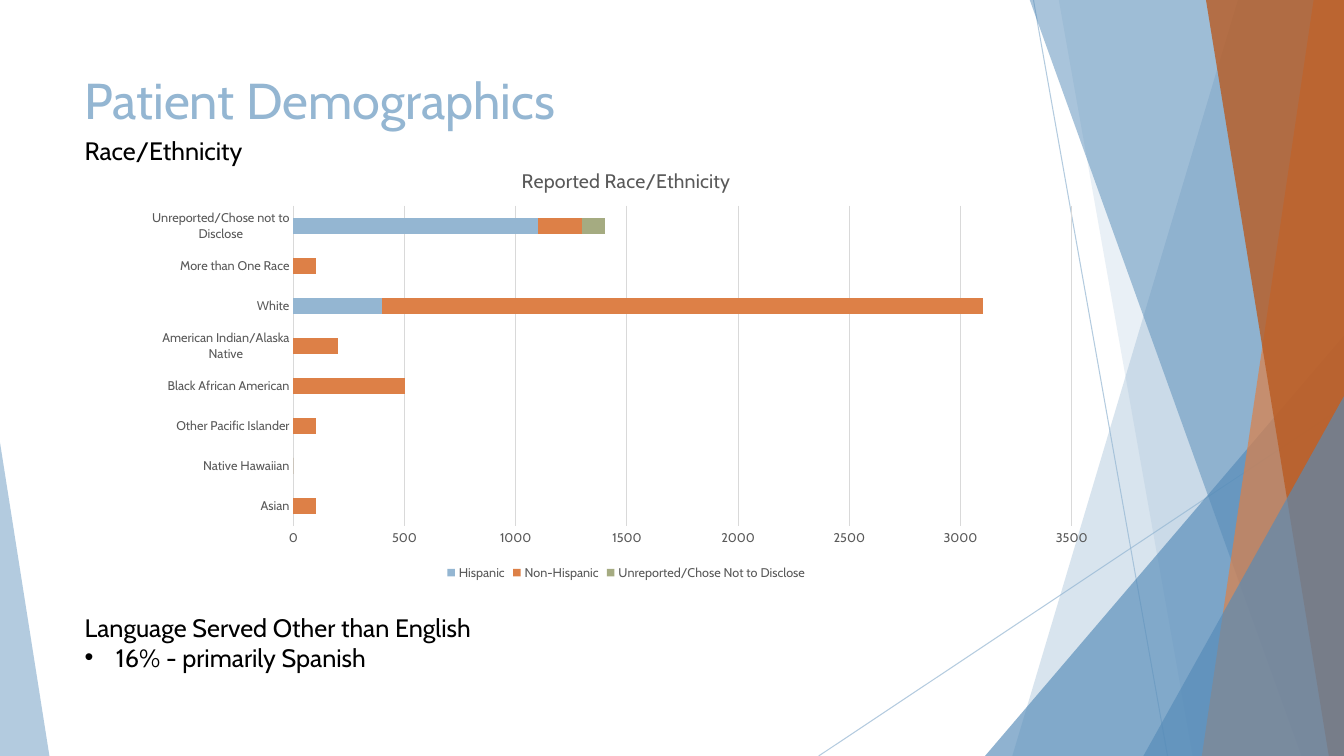
"""Build the Patient Demographics slide."""
from lxml.etree import SubElement as Sub
from pptx import Presentation
from pptx.chart.data import CategoryChartData as Data
from pptx.dml.color import RGBColor
from pptx.enum.chart import XL_CHART_TYPE as Kind, XL_LEGEND_POSITION as Spot, XL_TICK_MARK as Tick
from pptx.enum.shapes import MSO_CONNECTOR as Link, MSO_SHAPE as Shape
from pptx.enum.text import MSO_ANCHOR as Anchor, PP_ALIGN as Align
from pptx.oxml import parse_xml
from pptx.oxml.ns import nsdecls, qn
from pptx.util import Inches, Pt


def hue(code):
    return RGBColor.from_string(code)


def style(font, size, code):
    for key, val in {"name": "Cabin", "size": Pt(size), "bold": False}.items():
        setattr(font, key, val)
    font.color.rgb = hue(code)


SKY, STEEL, ORANGE, RUST, SAGE = "94B6D2", "558BB8", "DD8047", "B95B22", "A5AB81"
INK, GRAY, GRID = "000000", "595959", "D9D9D9"
WIDE, HIGH, EDGE = 13.33, 7.5, -0.01

deck = Presentation()
deck.slide_width, deck.slide_height = Inches(WIDE), Inches(HIGH)
slide = deck.slides.add_slide(deck.slide_layouts[1])
shapes = slide.shapes

for ends in [(10.25, 0, 11.58, HIGH), (WIDE, 4.03, 8.12, HIGH)]:
    ray = shapes.add_connector(Link.STRAIGHT, *map(Inches, ends))
    ray.line.color.rgb = hue(SKY)
    ray.line.width = Pt(0.75)
    Sub(ray.element.spPr.find(".//" + qn("a:srgbClr")), qn("a:alpha"), val="70000")
    Sub(ray.element.spPr, qn("a:effectLst"))

shards = [
    (SKY, 36, "quad", (12.28, 10.04)),
    (SKY, 20, "quad", (10.5, 11.83)),
    (STEEL, 66, "right", (9.77, 3.33, 3.56, 4.17)),
    (STEEL, 50, "quad", (10.21, 12.91)),
    (ORANGE, 70, "quad", (13.03, 11.92)),
    (RUST, 80, "quad", (11.96, 13.18)),
    (STEEL, 66, "right", (11.34, 3.93, 1.99, 3.57)),
    (SKY, 70, "left", (0, 4.39, 0.49, 3.11)),
]
for code, alpha, form, dims in shards:
    if form == "quad":
        top, base = dims
        pen = shapes.build_freeform(Inches(top), Inches(EDGE))
        rest = [(WIDE, EDGE), (WIDE, HIGH), (base, HIGH)]
        pen.add_line_segments([(Inches(x), Inches(y)) for x, y in rest])
        shard = pen.convert_to_shape()
    else:
        shard = shapes.add_shape(Shape.ISOSCELES_TRIANGLE, *map(Inches, dims))
        shard.adjustments[0] = 1 if form == "right" else 0
    shard.shadow.inherit = False
    shard.line.fill.background()
    shard.fill.solid()
    shard.fill.fore_color.rgb = hue(code)
    Sub(shard.element.spPr.find(".//" + qn("a:srgbClr")), qn("a:alpha"), val=str(alpha * 1000))

title, body = slide.placeholders
label = shapes.add_textbox(0, 0, 0, 0)
texts = [
    (title, (0.74, 0.64, 9.4, 1.44), 36, SKY, "Patient Demographics"),
    (label, (0.74, 1.29, 4.2, 0.71), 18, INK, "Race/Ethnicity"),
    (body, (0.74, 6.02, 6.26, 0.71), 18, INK,
     "Language Served Other than English\n16% - primarily Spanish"),
]
for box, place, size, code, words in texts:
    for key, val in zip(("left", "top", "width", "height"), place):
        setattr(box, key, Inches(val))
    frame = box.text_frame
    frame.text = words
    frame.word_wrap = True
    frame.vertical_anchor = Anchor.TOP
    for para in frame.paragraphs:
        para.alignment = Align.LEFT
        para.space_before = Pt(0)
        style(para.runs[0].font, size, code)

for para, mark in zip(body.text_frame.paragraphs, (None, "•")):
    props = para._p.get_or_add_pPr()
    dent = Inches(0.31) if mark else 0
    props.set("marL", str(dent))
    props.set("indent", str(-dent))
    if mark:
        Sub(props, qn("a:buFont"), typeface="Arial")
        Sub(props, qn("a:buChar"), char=mark)
    else:
        Sub(props, qn("a:buNone"))

data = Data()
data.categories = [
    "Asian", "Native Hawaiian", "Other Pacific Islander", "Black African American",
    "American Indian/Alaska Native", "White", "More than One Race",
    "Unreported/Chose not to Disclose",
]
groups = [
    ("Hispanic", SKY, (0, 0, 0, 0, 0, 400, 0, 1100)),
    ("Non-Hispanic", ORANGE, (100, 0, 100, 500, 200, 2700, 100, 200)),
    ("Unreported/Chose Not to Disclose", SAGE, (0, 0, 0, 0, 0, 0, 0, 100)),
]
for name, code, vals in groups:
    data.add_series(name, vals)
wide, high = 9.56, 4.32
place = map(Inches, (1.43, 1.48, wide, high))
chart = shapes.add_chart(Kind.BAR_STACKED, *place, data).chart
style(chart.font, 10, INK)

chart.has_title = True
head = chart.chart_title
head.include_in_layout = False
head.text_frame.text = "Reported Race/Ethnicity"
style(head.text_frame.paragraphs[0].runs[0].font, 14, GRAY)

chart.has_legend = True
for key, val in {"position": Spot.BOTTOM, "include_in_layout": False}.items():
    setattr(chart.legend, key, val)
style(chart.legend.font, 9, GRAY)

plot = chart.plots[0]
for key, val in {"gap_width": 150, "overlap": 100, "vary_by_categories": False}.items():
    setattr(plot, key, val)
for bar, (name, code, vals) in zip(plot.series, groups):
    bar.invert_if_negative = False
    bar.format.fill.solid()
    bar.format.fill.fore_color.rgb = hue(code)

cat, val_axis = chart.category_axis, chart.value_axis
for axis in (cat, val_axis):
    axis.major_tick_mark = axis.minor_tick_mark = Tick.NONE
    style(axis.tick_labels.font, 9, GRAY)
for key, val in {"minimum_scale": 0, "maximum_scale": 3500, "major_unit": 500,
                 "has_major_gridlines": True}.items():
    setattr(val_axis, key, val)
val_axis.format.line.fill.background()
for line in (cat.format.line, val_axis.major_gridlines.format.line):
    line.color.rgb = hue(GRID)
    line.width = Pt(0.75)

area = chart.element.find(".//" + qn("c:plotArea"))
for old in area.findall(qn("c:layout")):
    area.remove(old)
rules = {"layoutTarget": "inner", "xMode": "edge", "yMode": "edge",
         "x": 1.48 / wide, "y": 0.56 / high, "w": 7.72 / wide, "h": 3.18 / high}
inner = "".join(f'<c:{key} val="{val}"/>' for key, val in rules.items())
area.insert(0, parse_xml(
    f'<c:layout {nsdecls("c")}><c:manualLayout>{inner}</c:manualLayout></c:layout>'))

deck.save("out.pptx")
